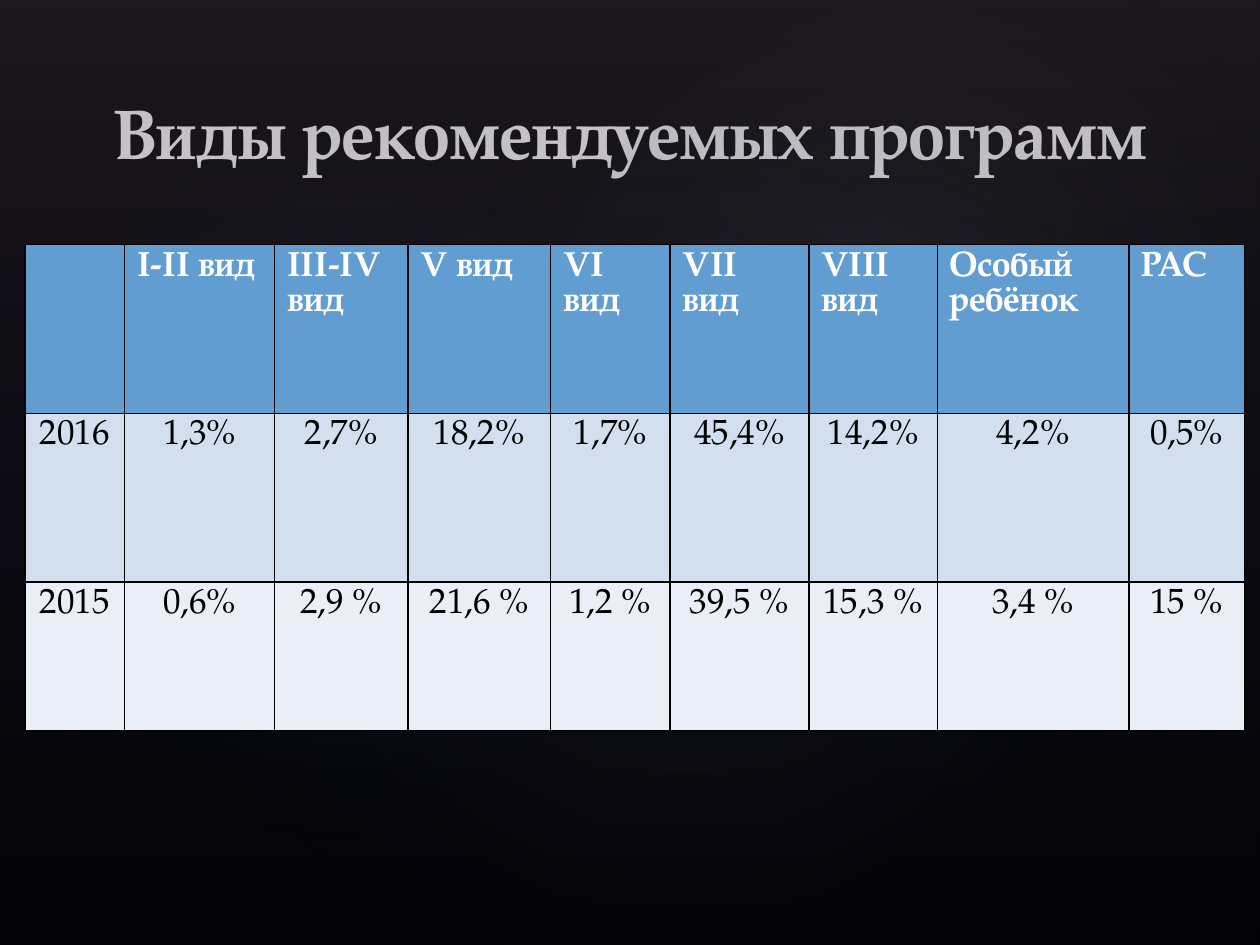
from lxml import etree
from pptx import Presentation
from pptx.dml.color import RGBColor
from pptx.enum.shapes import MSO_SHAPE
from pptx.enum.text import MSO_ANCHOR, PP_ALIGN
from pptx.oxml.ns import qn
from pptx.util import Inches, Pt

RECT, OVAL = MSO_SHAPE.RECTANGLE, MSO_SHAPE.OVAL
LEFT, CENTER = PP_ALIGN.LEFT, PP_ALIGN.CENTER
BOTTOM = MSO_ANCHOR.BOTTOM

TITLE = "Виды рекомендуемых программ"
ROWS = [
    ["", "I-II вид", "III-IV вид", "V вид", "VI вид", "VII вид", "VIII вид",
     "Особый ребёнок", "РАС"],
    ["2016", "1,3%", "2,7%", "18,2%", "1,7%", "45,4%", "14,2%", "4,2%", "0,5%"],
    ["2015", "0,6%", "2,9 %", "21,6 %", "1,2 %", "39,5 %", "15,3 %", "3,4 %", "15 %"],
]
COL_WIDTHS = [0.79, 1.19, 1.06, 1.13, 0.95, 1.1, 1.02, 1.52, 0.92]
ROW_HEIGHTS = [1.34, 1.34, 1.18]

THEME = {
    "font": "TeX Gyre Pagella", "title_size": 40, "cell_size": 20,
    "back": "000000", "light": "FFFFFF", "dark": "000000", "border": "000000",
    "row_fills": ["629DD1", "D3DFEE", "EAEFF7"],
}
# Gradient stops: position %, colour, opacity %
SHEEN = [(0, "504652", 36), (100, "242852", 10)]
# Box, rotation, centre opacity %
GLOWS = [
    ((1.5, 1.14, 7.92, 6.24), 328.7, 7),
    ((-0.3, 1.28, 6.06, 4.9), 294.3, 8),
    ((3.58, 0.13, 7.09, 5.2), 328.7, 8),
]


def child(parent, tag, **attrs):
    return etree.SubElement(parent, qn(tag), {k: str(v) for k, v in attrs.items()})


def add_color(parent, color, opacity=100):
    clr = child(parent, "a:srgbClr", val=color)
    if opacity < 100:
        child(clr, "a:alpha", val=opacity * 1000)


def add_gradient_shape(slide, kind, box, stops, rotation=0):
    """Linear top-down gradient for rectangles, circular one for ovals."""
    sp = slide.shapes.add_shape(kind, *map(Inches, box))
    sp.rotation = rotation
    sp.shadow.inherit = False
    sp.line.fill.background()
    grad = etree.Element(qn("a:gradFill"), rotWithShape="1")
    stop_list = child(grad, "a:gsLst")
    for pos, color, opacity in stops:
        add_color(child(stop_list, "a:gs", pos=pos * 1000), color, opacity)
    if kind == OVAL:
        circle = child(grad, "a:path", path="circle")
        child(circle, "a:fillToRect", l=50000, t=50000, r=50000, b=50000)
    else:
        child(grad, "a:lin", ang=90 * 60000, scaled=0)
    sp.element.spPr.find(qn("a:prstGeom")).addnext(grad)


def write(tf, text, size, color, bold=False, align=LEFT, spacing=None):
    p = tf.paragraphs[0]
    p.alignment = align
    p.line_spacing = spacing
    r = p.add_run()
    r.text = text
    r.font.name = THEME["font"]
    r.font.size = Pt(size)
    r.font.bold = bold
    r.font.color.rgb = RGBColor.from_string(color)


def style_cell(cell, fill):
    tc_pr = cell._tc.get_or_add_tcPr()
    for side in ("a:lnL", "a:lnR", "a:lnT", "a:lnB"):
        add_color(child(child(tc_pr, side, w=Pt(1)), "a:solidFill"), THEME["border"])
    cell.fill.solid()
    cell.fill.fore_color.rgb = RGBColor.from_string(fill)


def add_table(slide):
    frame = slide.shapes.add_table(
        len(ROWS), len(COL_WIDTHS), Inches(0.2), Inches(1.94),
        Inches(sum(COL_WIDTHS)), Inches(sum(ROW_HEIGHTS)))
    table = frame.table
    for column, width in zip(table.columns, COL_WIDTHS):
        column.width = Inches(width)
    size = THEME["cell_size"]
    for i, values in enumerate(ROWS):
        table.rows[i].height = Inches(ROW_HEIGHTS[i])
        header = i == 0
        for j, value in enumerate(values):
            cell = table.cell(i, j)
            style_cell(cell, THEME["row_fills"][i])
            if value:
                write(cell.text_frame, value, size,
                      THEME["light" if header else "dark"], bold=header,
                      align=LEFT if header else CENTER, spacing=Pt(size))


def add_title(slide):
    title = slide.shapes.title
    title.left, title.top, title.width, title.height = map(
        Inches, (0.12, 0.44, 9.76, 0.94))
    tf = title.text_frame
    tf.vertical_anchor = BOTTOM
    tf.margin_bottom = 0
    write(tf, TITLE, THEME["title_size"], THEME["light"], bold=True, align=CENTER)


def main():
    prs = Presentation()
    prs.slide_width, prs.slide_height = Inches(10), Inches(7.5)
    slide = prs.slides.add_slide(prs.slide_layouts[5])
    background = slide.background.fill
    background.solid()
    background.fore_color.rgb = RGBColor.from_string(THEME["back"])
    add_gradient_shape(slide, RECT, (0, 0, 10, 7.5), SHEEN)
    for box, rotation, opacity in GLOWS:
        stops = [(0, "C4BCC6", opacity), (58, "242852", 0), (100, "242852", 0)]
        add_gradient_shape(slide, OVAL, box, stops, rotation)
    add_title(slide)
    add_table(slide)
    prs.save("out.pptx")


if __name__ == "__main__":
    main()
